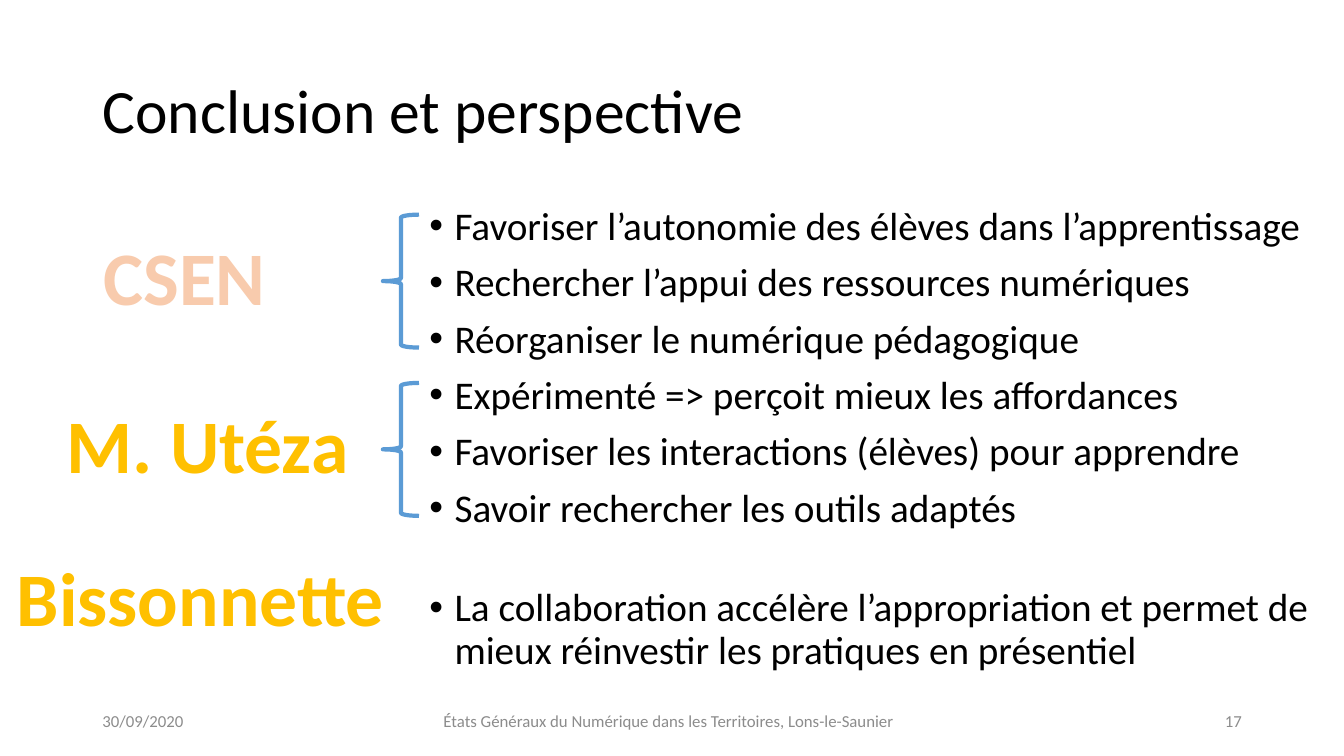
import dataclasses

import pptx
import pptx.dml.color
import pptx.enum.shapes
import pptx.enum.text
import pptx.oxml
import pptx.oxml.ns
import pptx.util

Cm = pptx.util.Cm
Pt = pptx.util.Pt
RGBColor = pptx.dml.color.RGBColor
Align = pptx.enum.text.PP_ALIGN
Anchor = pptx.enum.text.MSO_ANCHOR
AutoSize = pptx.enum.text.MSO_AUTO_SIZE

FONT = "Calibri"
BLACK = RGBColor(0x00, 0x00, 0x00)
GREY = RGBColor(0x8C, 0x8C, 0x8C)
PEACH = RGBColor(0xF8, 0xCB, 0xAD)
GOLD = RGBColor(0xFF, 0xC0, 0x00)
BLUE = RGBColor(0x5B, 0x9B, 0xD5)


@dataclasses.dataclass(frozen=True)
class Area:
    left: float
    top: float
    width: float
    height: float

    def lengths(self) -> tuple:
        return Cm(self.left), Cm(self.top), Cm(self.width), Cm(self.height)


@dataclasses.dataclass(frozen=True)
class Source:
    name: str
    area: Area
    color: RGBColor


@dataclasses.dataclass(frozen=True)
class FooterItem:
    text: str
    area: Area
    align: Align


TITLE_AREA = Area(2.33, 1.02, 29.21, 3.68)
POINTS_AREA = Area(10.57, 5.08, 22.67, 12.09)
BRACES = [Area(9.65, top, 0.91, 3.35) for top in (5.41, 9.65)]

SOURCES = [
    Source("CSEN", Area(2.33, 5.66, 4.65, 2.57), PEACH),
    Source("M. Utéza", Area(1.4, 9.91, 7.67, 2.57), GOLD),
    Source("Bissonnette", Area(0.1, 13.77, 9.91, 2.57), GOLD),
]

# Each group of points belongs to one source
GROUPED_POINTS = [
    "Favoriser l’autonomie des élèves dans l’apprentissage",
    "Rechercher l’appui des ressources numériques",
    "Réorganiser le numérique pédagogique",
    "Expérimenté => perçoit mieux les affordances",
    "Favoriser les interactions (élèves) pour apprendre",
    "Savoir rechercher les outils adaptés",
]
LAST_POINT = (
    "La collaboration accélère l’appropriation et permet de "
    "mieux réinvestir les pratiques en présentiel"
)

FOOTER = [
    FooterItem("30/09/2020", Area(2.33, 17.65, 7.62, 1.02), Align.LEFT),
    FooterItem(
        "États Généraux du Numérique dans les Territoires, Lons-le-Saunier",
        Area(10.57, 17.65, 12.57, 1.02),
        Align.CENTER,
    ),
    FooterItem("17", Area(23.93, 17.65, 7.62, 1.02), Align.RIGHT),
]


def write(para, text: str, *, size: float, color: RGBColor = BLACK,
          bold: bool = False, align: Align = Align.LEFT,
          line_spacing: float = 1.0, before: float = 0) -> None:
    """Add formatted text to a paragraph."""
    para.alignment = align
    para.line_spacing = line_spacing
    para.space_before = Pt(before)
    span = para.add_run()
    span.text = text
    span.font.name = FONT
    span.font.size = Pt(size)
    span.font.bold = bold
    span.font.color.rgb = color


def add_box(page, area: Area, *, wrap: bool = True, anchor: Anchor = Anchor.TOP):
    """Add a text box and return its text frame."""
    frame = page.shapes.add_textbox(*area.lengths()).text_frame
    frame.word_wrap = wrap
    frame.vertical_anchor = anchor
    return frame


def add_bullet(para) -> None:
    """Give a paragraph a round bullet with a hanging indent."""
    properties = para._p.get_or_add_pPr()
    properties.set("marL", str(Cm(0.635)))
    properties.set("indent", str(-Cm(0.635)))
    namespace = pptx.oxml.ns.nsdecls("a")
    for tag in ('buFont typeface="Arial"', 'buChar char="•"'):
        properties.append(pptx.oxml.parse_xml(f"<a:{tag} {namespace}/>"))


def add_title(page) -> None:
    title = page.shapes.title
    title.left, title.top, title.width, title.height = TITLE_AREA.lengths()
    frame = title.text_frame
    frame.word_wrap = True
    frame.auto_size = AutoSize.NONE
    frame.vertical_anchor = Anchor.MIDDLE
    write(frame.paragraphs[0], "Conclusion et perspective", size=44, line_spacing=0.9)


def add_points(page) -> None:
    frame = add_box(page, POINTS_AREA)
    points = [(text, 10) for text in GROUPED_POINTS] + [(LAST_POINT, 41)]
    for index, (text, before) in enumerate(points):
        para = frame.add_paragraph() if index else frame.paragraphs[0]
        write(para, text, size=28, line_spacing=0.9, before=before)
        add_bullet(para)


def add_brace(page, area: Area) -> None:
    kind = pptx.enum.shapes.MSO_SHAPE.LEFT_BRACE
    brace = page.shapes.add_shape(kind, *area.lengths())
    brace.shadow.inherit = False
    brace.fill.background()
    brace.line.color.rgb = BLUE
    brace.line.width = Pt(3)


def main() -> None:
    deck = pptx.Presentation()
    deck.slide_width, deck.slide_height = Cm(33.87), Cm(19.05)
    page = deck.slides.add_slide(deck.slide_layouts.get_by_name("Title Only"))

    # Title and bullet points
    add_title(page)
    add_points(page)

    # Date, event and page number
    for item in FOOTER:
        frame = add_box(page, item.area, anchor=Anchor.MIDDLE)
        write(frame.paragraphs[0], item.text, size=12, color=GREY, align=item.align)

    # Sources and their braces
    for source in SOURCES:
        frame = add_box(page, source.area, wrap=False)
        frame.auto_size = AutoSize.SHAPE_TO_FIT_TEXT
        write(frame.paragraphs[0], source.name, size=54, color=source.color,
              bold=True, align=Align.CENTER)
    for area in BRACES:
        add_brace(page, area)

    deck.save("out.pptx")


if __name__ == "__main__":
    main()
